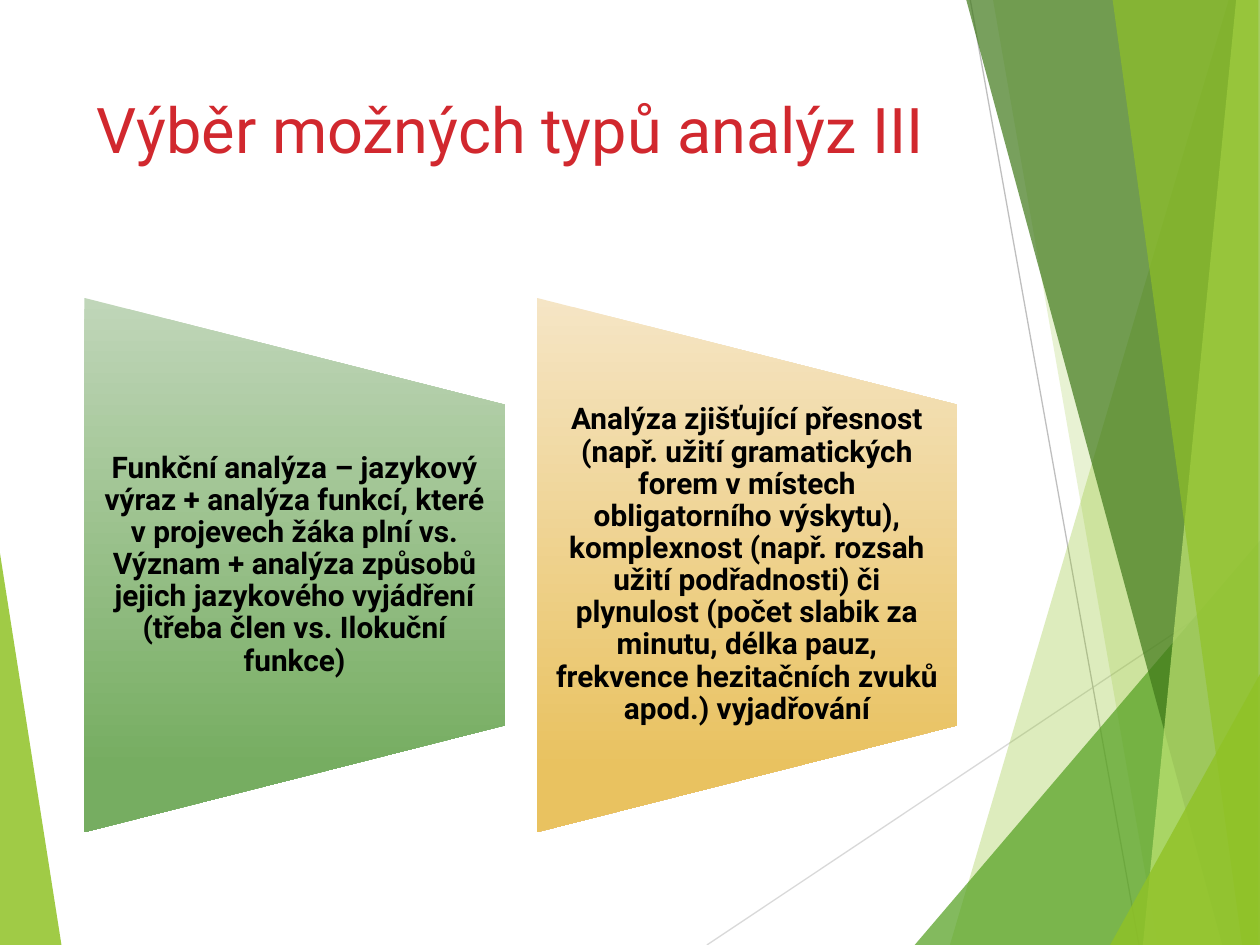
from lxml.etree import SubElement
from pptx import Presentation
from pptx.dml.color import RGBColor
from pptx.enum.shapes import MSO_CONNECTOR as Link, MSO_SHAPE as Shape
from pptx.enum.text import MSO_ANCHOR as Anchor, PP_ALIGN as Align
from pptx.oxml.ns import qn
from pptx.util import Cm, Pt

# Content
TITLE = "Výběr možných typů analýz III"
CARDS = [
    ("Funkční analýza – jazykový výraz + analýza funkcí, které v projevech "
     "žáka plní vs. Význam + analýza způsobů jejich jazykového vyjádření "
     "(třeba člen vs. Ilokuční funkce)", "C0D6B9", "76AD61"),
    ("Analýza zjišťující přesnost (např. užití gramatických forem v místech "
     "obligatorního výskytu), komplexnost (např. rozsah užití podřadnosti) "
     "či plynulost (počet slabik za minutu, délka pauz, frekvence "
     "hezitačních zvuků apod.) vyjadřování", "F5E5C5", "E9C260"),
]

# Layout in centimetres
WIDE, HIGH = 25.4, 19.05
LEFT, MID, PITCH = 1.7, 11.39, 9.12
CARD_W, CARD_H, TEXT_H = 8.48, 10.77, 6.48
FONT = "Roboto"

# Decor: top x, top y, foot x, edge x, colour, opacity in percent
BACK = [(0, 11.15, 1.24, 0, "90C226", 85)]
RAYS = [(14.25, HIGH, WIDE, 11.61, "D9D9D9"),
        (19.56, 0, 22.96, HIGH, "BFBFBF")]
FRONT = [
    (24.77, 0, 19.15, WIDE, "90C226", 30),
    (20.02, 0, 23.34, WIDE, "90C226", 20),
    (WIDE, 10.9, 18.44, WIDE, "54A021", 72),
    (19.48, 0, 24.64, WIDE, "3F7819", 70),
    (24.92, 0, 23.04, WIDE, "C0E474", 70),
    (22.43, 0, 25.04, 25.37, "90C226", 65),
    (WIDE, 13.59, 22.38, WIDE, "90C226", 80),
]


def tint(color, code):
    color.rgb = RGBColor.from_string(code)


def write(para, text, size, code, bold=False):
    run = para.add_run()
    run.text = text
    run.font.name, run.font.size, run.font.bold = FONT, Pt(size), bold
    tint(run.font.color, code)


def add_shard(shapes, top, y, foot, edge, code, alpha):
    pen = shapes.build_freeform(Cm(top), Cm(y))
    pen.add_line_segments(
        [(Cm(foot), Cm(HIGH)), (Cm(edge), Cm(HIGH)), (Cm(edge), Cm(y))])
    shard = pen.convert_to_shape()
    shard.shadow.inherit = False
    shard.line.fill.background()
    shard.fill.solid()
    tint(shard.fill.fore_color, code)
    color = shard.fill._xPr.find(".//" + qn("a:srgbClr"))
    SubElement(color, qn("a:alpha"), val=str(alpha * 1000))


def add_ray(shapes, x1, y1, x2, y2, code):
    ray = shapes.add_connector(Link.STRAIGHT, Cm(x1), Cm(y1), Cm(x2), Cm(y2))
    ray.line.width = Pt(0.75)
    tint(ray.line.color, code)
    SubElement(ray._element.spPr, qn("a:effectLst"))


def add_card(shapes, left, text, light, dark):
    # The turned shape is drawn lying down around the same centre
    mid = left + CARD_W / 2
    card = shapes.add_shape(
        Shape.FLOWCHART_MANUAL_OPERATION, Cm(mid - CARD_H / 2),
        Cm(MID - CARD_W / 2), Cm(CARD_H), Cm(CARD_W))
    card.rotation = 270
    card.shadow.inherit = False
    card.line.fill.background()
    card.fill.gradient()
    card.fill.gradient_angle = 270
    for stop, code, pos in zip(card.fill.gradient_stops, (light, dark), (0, 0.88)):
        tint(stop.color, code)
        stop.position = pos
    # Keep the gradient upright
    card._element.spPr.find(qn("a:gradFill")).set("rotWithShape", "0")

    box = shapes.add_textbox(
        Cm(left), Cm(MID - TEXT_H / 2), Cm(CARD_W), Cm(TEXT_H))
    frame = box.text_frame
    frame.word_wrap = True
    frame.vertical_anchor = Anchor.MIDDLE
    frame.margin_left = frame.margin_right = Cm(0.3)
    frame.margin_top = frame.margin_bottom = 0
    para = frame.paragraphs[0]
    para.alignment = Align.CENTER
    para.line_spacing = 0.9
    write(para, text, 17, "000000", True)


def main():
    deck = Presentation()
    deck.slide_width, deck.slide_height = Cm(WIDE), Cm(HIGH)
    slide = deck.slides.add_slide(deck.slide_layouts[5])
    shapes = slide.shapes

    # Backdrop
    for shard in BACK:
        add_shard(shapes, *shard)
    for ray in RAYS:
        add_ray(shapes, *ray)
    for shard in FRONT:
        add_shard(shapes, *shard)

    # Title
    title = shapes.title
    title.left, title.top = Cm(LEFT), Cm(1.7)
    title.width, title.height = Cm(17.63), Cm(3.66)
    title.text_frame.vertical_anchor = Anchor.TOP
    para = title.text_frame.paragraphs[0]
    para.alignment = Align.LEFT
    write(para, TITLE, 36, "D1282E")

    # Cards
    for i, card in enumerate(CARDS):
        add_card(shapes, LEFT + i * PITCH, *card)

    deck.save("out.pptx")


if __name__ == "__main__":
    main()
